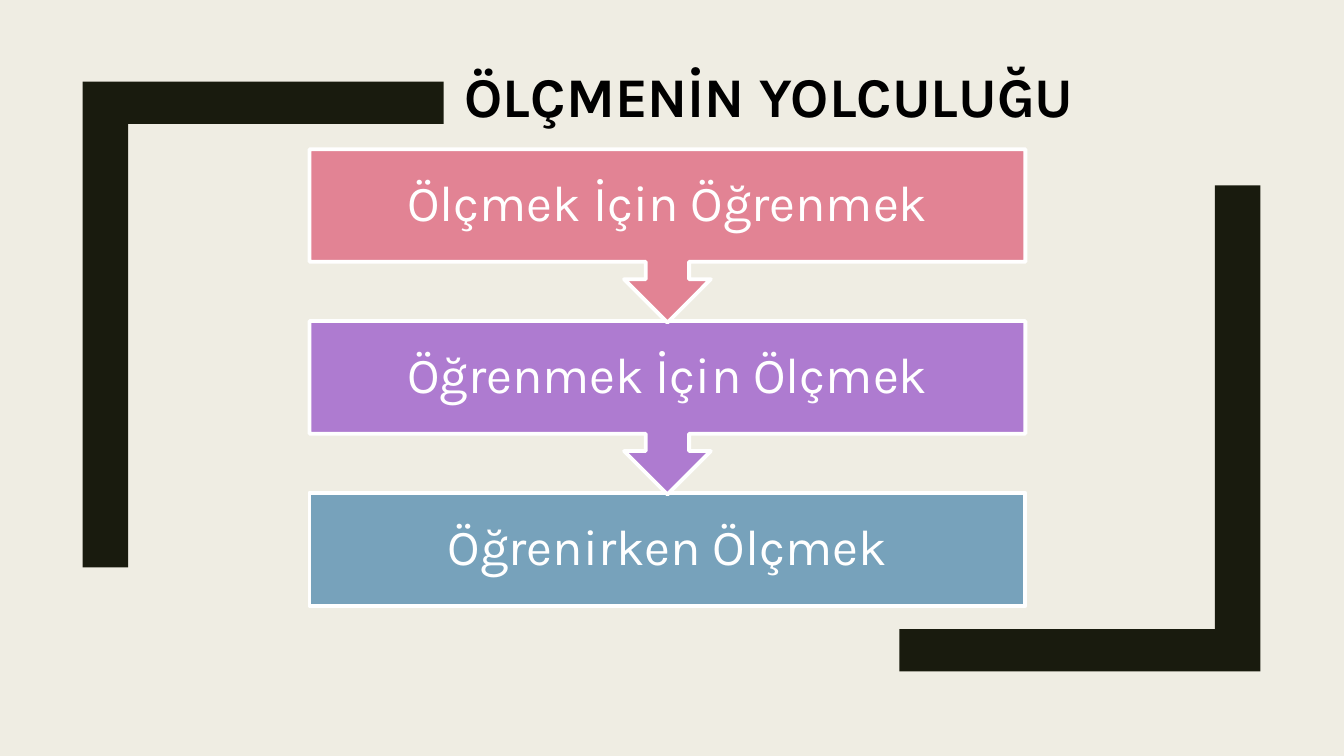
from collections import namedtuple

from pptx import Presentation
from pptx.dml.color import RGBColor
from pptx.enum.shapes import MSO_SHAPE as Preset
from pptx.enum.text import MSO_ANCHOR as Anchor, MSO_AUTO_SIZE as AutoSize, PP_ALIGN as Align
from pptx.util import Inches, Pt

COLORS = {
    "background": "EFEDE3",
    "bracket": "191B0E",
    "title": "000000",
    "white": "FFFFFF",
    "rose": "E28394",
    "violet": "AE7BD0",
    "blue": "77A2BB",
}
FONT = "Karla"
STEPS = [
    ("Ölçmek İçin Öğrenmek", "rose"),
    ("Öğrenmek İçin Ölçmek", "violet"),
    ("Öğrenirken Ölçmek", "blue"),
]

Box = namedtuple("Box", "left top width height")


def inch_box(left, top, width, height):
    return Box(*(Inches(length) for length in (left, top, width, height)))


def paint(fill, color):
    fill.solid()
    fill.fore_color.rgb = RGBColor.from_string(COLORS[color])


def write(frame, text, *, size, color, align, anchor, bold=False, inset=None, spacing=1.0):
    frame.text = text
    frame.word_wrap = True
    frame.auto_size = AutoSize.NONE
    frame.vertical_anchor = anchor
    if inset is not None:
        frame.margin_left = frame.margin_right = Inches(inset)
        frame.margin_top = frame.margin_bottom = Inches(inset)
    paragraph = frame.paragraphs[0]
    paragraph.alignment = align
    paragraph.line_spacing = spacing
    font = paragraph.runs[0].font
    font.name, font.size, font.bold = FONT, Pt(size), bold
    font.color.rgb = RGBColor.from_string(COLORS[color])


def add_bracket(slide, box, turned=False):
    """Corner at the top left of the box, or at the bottom right when turned."""
    side, bar = Inches(0.45), Inches(0.42)
    outline = [(0, 0), (box.width, 0), (box.width, bar),
               (side, bar), (side, box.height), (0, box.height)]
    if turned:
        outline = [(box.width - x, box.height - y) for x, y in outline]
    corners = [(box.left + x, box.top + y) for x, y in outline]
    builder = slide.shapes.build_freeform(*corners[0])
    builder.add_line_segments(corners[1:], close=True)
    bracket = builder.convert_to_shape()
    bracket.shadow.inherit = False
    paint(bracket.fill, "bracket")
    bracket.line.fill.background()


def add_title(slide, box):
    title = slide.shapes.title
    title.left, title.top, title.width, title.height = box
    write(title.text_frame, "ÖLÇMENİN YOLCULUĞU", size=40, color="title",
          align=Align.LEFT, anchor=Anchor.TOP, bold=True)


def add_steps(slide, box):
    """Stack of steps, each but the last pointing down at the next."""
    panel_height = Inches(1.12)
    pitch = (box.height - panel_height) // (len(STEPS) - 1)
    callout_height = Inches(1.72)
    # Bottom step first, so that each arrow tip lies over the next panel
    for row, (text, color) in reversed(list(enumerate(STEPS))):
        last = row == len(STEPS) - 1
        step = slide.shapes.add_shape(
            Preset.RECTANGLE if last else Preset.DOWN_ARROW_CALLOUT,
            box.left, box.top + row * pitch, box.width,
            panel_height if last else callout_height)
        step.shadow.inherit = False
        paint(step.fill, color)
        paint(step.line.fill, "white")
        step.line.width = Pt(2.75)
        write(step.text_frame, text, size=36, color="white", align=Align.CENTER,
              anchor=Anchor.MIDDLE, inset=0.28, spacing=0.9)


def main():
    deck = Presentation()
    deck.slide_width, deck.slide_height = Inches(13.33), Inches(7.5)
    slide = deck.slides.add_slide(deck.slide_layouts[5])
    paint(slide.background.fill, "background")

    # Frame corners
    add_bracket(slide, inch_box(8.92, 1.84, 3.58, 4.82), turned=True)
    add_bracket(slide, inch_box(0.82, 0.81, 3.58, 4.82))

    # Content
    add_steps(slide, inch_box(3.07, 1.48, 7.1, 4.53))
    add_title(slide, inch_box(4.51, 0.56, 7.51, 0.77))
    deck.save("out.pptx")


if __name__ == "__main__":
    main()
